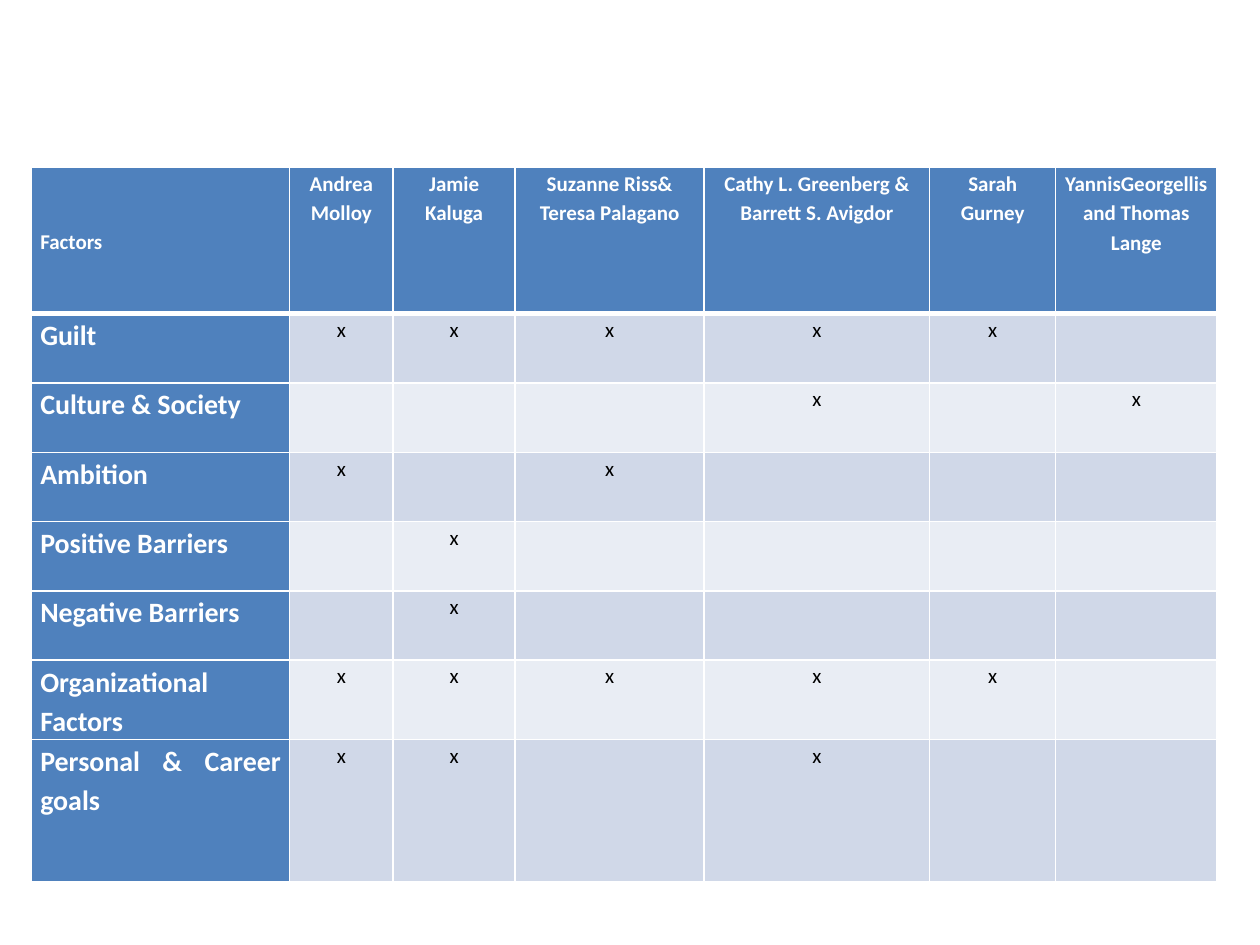
from lxml.etree import SubElement
from pptx import Presentation
from pptx.dml.color import RGBColor
from pptx.enum.text import MSO_ANCHOR, PP_ALIGN
from pptx.oxml.ns import qn
from pptx.util import Inches, Pt

FONT = "Calibri"
BLUE, WHITE, BLACK = "4F81BD", "FFFFFF", "000000"
BANDS = ["D0D8E8", "E9EDF4"]

COLUMN_WIDTHS = [2.05, 0.82, 0.97, 1.5, 1.79, 1, 1.28]
ROW_HEIGHTS = [1.16] + [0.55] * 5 + [0.63, 1.13]
AUTHORS = [
    "Andrea Molloy",
    "Jamie Kaluga",
    "Suzanne Riss& Teresa Palagano",
    "Cathy L. Greenberg & Barrett S. Avigdor",
    "Sarah Gurney",
    "YannisGeorgellis and Thomas Lange",
]
# Each factor with the numbers of the author columns that mention it
FACTORS = [
    ("Guilt", {1, 2, 3, 4, 5}),
    ("Culture & Society", {4, 6}),
    ("Ambition", {1, 3}),
    ("Positive Barriers", {2}),
    ("Negative Barriers", {2}),
    ("Organizational Factors", {1, 2, 3, 4, 5}),
    ("Personal & Career goals", {1, 2, 4}),
]


def color(value):
    return RGBColor.from_string(value)


def write_text(cell, text, size=12, ink=WHITE, bold=True,
               align=PP_ALIGN.CENTER, anchor=MSO_ANCHOR.TOP):
    cell.vertical_anchor = anchor
    para = cell.text_frame.paragraphs[0]
    para.alignment = align
    para.line_spacing = 1.15
    span = para.add_run()
    span.text = text
    span.font.name = FONT
    span.font.size = Pt(size)
    span.font.bold = bold
    span.font.color.rgb = color(ink)


def set_borders(cell, top=1, bottom=1):
    """Draw white borders; widths are in points."""
    properties = cell._tc.get_or_add_tcPr()
    widths = {"a:lnL": 1, "a:lnR": 1, "a:lnT": top, "a:lnB": bottom}
    for tag, width in widths.items():
        line = SubElement(properties, qn(tag), w=str(Pt(width)))
        fill = SubElement(line, qn("a:solidFill"))
        SubElement(fill, qn("a:srgbClr"), val=WHITE)


def style_cell(cell, fill, **borders):
    cell.margin_left = cell.margin_right = Inches(0.07)
    cell.margin_top = cell.margin_bottom = 0
    set_borders(cell, **borders)
    cell.fill.solid()
    cell.fill.fore_color.rgb = color(fill)


def fill_header(table):
    for column, text in enumerate(["Factors"] + AUTHORS):
        cell = table.cell(0, column)
        style_cell(cell, BLUE, bottom=3)
        if column == 0:
            write_text(cell, text, align=PP_ALIGN.LEFT, anchor=MSO_ANCHOR.MIDDLE)
        else:
            write_text(cell, text)


def fill_factor_row(table, row, factor, mentions):
    top = 3 if row == 1 else 1
    label = table.cell(row, 0)
    style_cell(label, BLUE, top=top)
    write_text(label, factor, size=16, align=PP_ALIGN.JUSTIFY)
    for column in range(1, len(COLUMN_WIDTHS)):
        cell = table.cell(row, column)
        style_cell(cell, BANDS[(row - 1) % 2], top=top)
        if column in mentions:
            write_text(cell, "x", ink=BLACK, bold=False)


def add_factor_table(page, left, top, width, height):
    table = page.shapes.add_table(
        len(ROW_HEIGHTS), len(COLUMN_WIDTHS),
        Inches(left), Inches(top), Inches(width), Inches(height)).table
    for column, column_width in zip(table.columns, COLUMN_WIDTHS):
        column.width = Inches(column_width)
    for row, row_height in zip(table.rows, ROW_HEIGHTS):
        row.height = Inches(row_height)
    fill_header(table)
    for row, (factor, mentions) in enumerate(FACTORS, start=1):
        fill_factor_row(table, row, factor, mentions)


def main():
    deck = Presentation()
    deck.slide_width, deck.slide_height = Inches(10), Inches(7.5)
    page = deck.slides.add_slide(deck.slide_layouts[6])
    add_factor_table(page, 0.25, 1.33, sum(COLUMN_WIDTHS), sum(ROW_HEIGHTS))
    deck.save("out.pptx")


if __name__ == "__main__":
    main()
